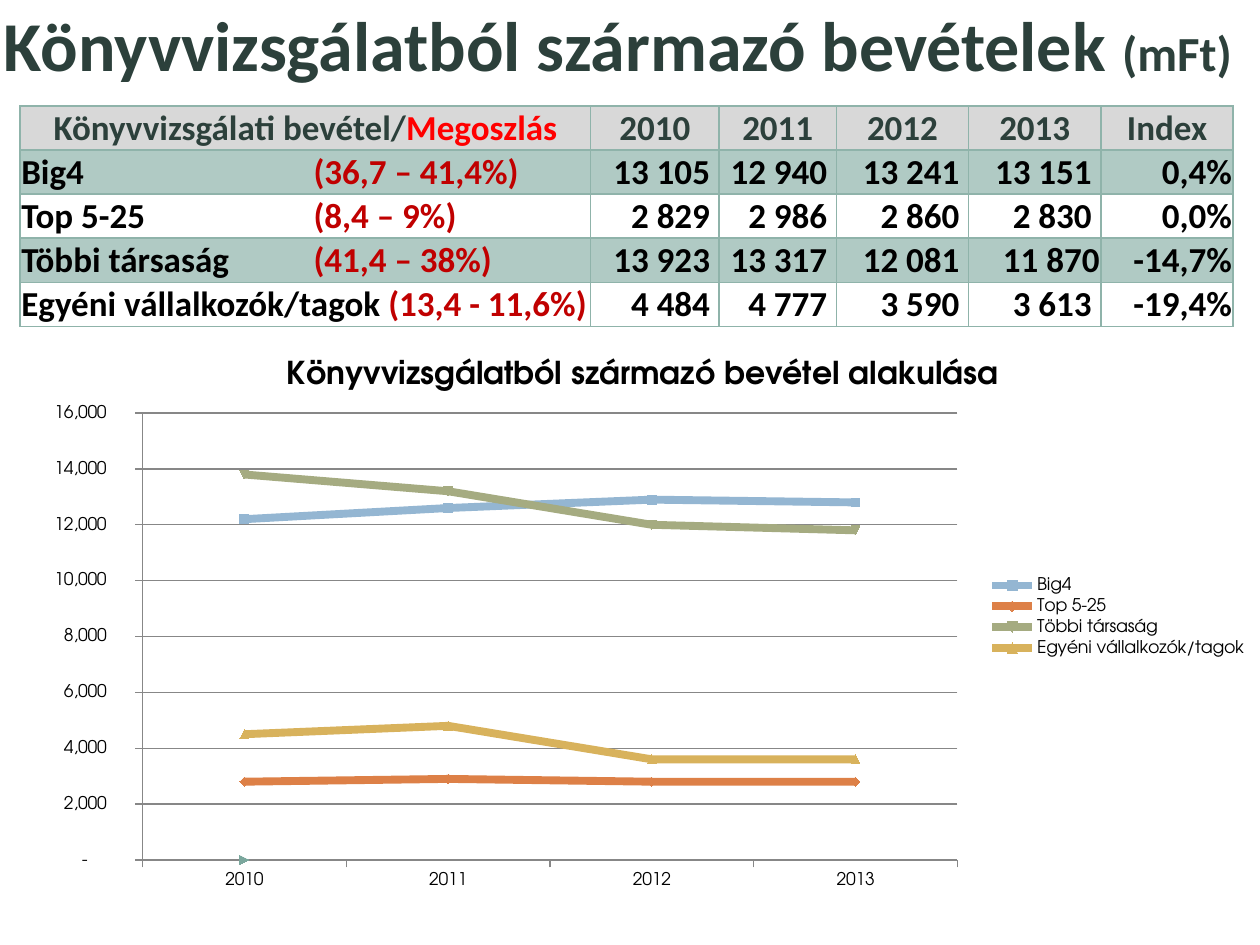
from dataclasses import dataclass

from lxml.etree import SubElement
from pptx import Presentation
from pptx.chart.data import CategoryChartData
from pptx.dml.color import RGBColor
from pptx.enum.chart import XL_CHART_TYPE, XL_LEGEND_POSITION, XL_TICK_MARK
from pptx.enum.text import MSO_ANCHOR, PP_ALIGN
from pptx.oxml import parse_xml
from pptx.oxml.ns import nsdecls, qn
from pptx.util import Pt


@dataclass(frozen=True)
class Theme:
    """Colours, fonts and type sizes of the slide."""
    dark: str = "2C403B"
    black: str = "000000"
    red: str = "FF0000"
    share: str = "C00000"
    head: str = "D8D8D8"
    band: str = "B0CAC4"
    edge: str = "8FB3AA"
    grid: str = "878787"
    lines: tuple = ("94B6D2", "DD8047", "A5AB81", "D8B25C", "7BA79D")
    text: str = "Calibri"
    plot: str = "TeX Gyre Adventor"
    title: int = 40
    unit: int = 28
    cell: int = 20
    chart: int = 18
    label: int = 10


THEME = Theme()
YEARS = ("2010", "2011", "2012", "2013")
WIDTHS = (326, 73.5, 67, 75.6, 75.6, 75.6)
ROWS = (
    ("Big4\t", "(36,7 – 41,4%)", "13 105", "12 940", "13 241", "13 151", "0,4%"),
    ("Top 5-25\t", "(8,4 – 9%)", "2 829", "2 986", "2 860", "2 830", "0,0%"),
    ("Többi társaság\t", "(41,4 – 38%)", "13 923", "13 317", "12 081", "11 870", "-14,7%"),
    ("Egyéni vállalkozók/tagok ", "(13,4 - 11,6%)", "4 484", "4 777", "3 590", "3 613", "-19,4%"),
)
SERIES = (
    ("Big4", (12200, 12600, 12900, 12800)),
    ("Top 5-25", (2800, 2900, 2800, 2800)),
    ("Többi társaság", (13800, 13200, 12000, 11800)),
    ("Egyéni vállalkozók/tagok", (4500, 4800, 3600, 3600)),
    ("Series 5", (0, None, None, None)),
)
FORMAT = r'_-* #,##0\ _F_t_-;\-* #,##0\ _F_t_-;_-* "-"??\ _F_t_-;_-@_-'


def rgb(code):
    """Turn a hex code into a colour."""
    return RGBColor.from_string(code)


def style(font, name, size, bold=True):
    """Set the face, size and weight of a font."""
    font.name, font.size, font.bold = name, Pt(size), bold


def add_runs(para, parts):
    """Add runs given as text and colour pairs."""
    for text, color in parts:
        run = para.add_run()
        run.text = text
        run.font.color.rgb = rgb(color)


def add_title(slide):
    """Place and fill the slide title."""
    shape = slide.shapes.title
    shape.left, shape.top, shape.width, shape.height = Pt(-41), Pt(-8), Pt(788), Pt(66)
    frame = shape.text_frame
    frame.vertical_anchor = MSO_ANCHOR.MIDDLE
    para = frame.paragraphs[0]
    para.alignment = PP_ALIGN.CENTER
    add_runs(para, (("Könyvvizsgálatból származó bevételek ", THEME.dark), ("(mFt)", THEME.dark)))
    for run, size in zip(para.runs, (THEME.title, THEME.unit)):
        style(run.font, THEME.text, size)


def add_edges(cell):
    """Draw the four borders of a cell."""
    props = cell._tc.get_or_add_tcPr()
    for spot, side in enumerate("LRTB"):
        props.insert(spot, parse_xml(
            f'<a:ln{side} {nsdecls("a")} w="{Pt(1)}"><a:solidFill>'
            f'<a:srgbClr val="{THEME.edge}"/></a:solidFill></a:ln{side}>'))


def fill_cell(cell, parts, align, fill=None, right=0.7):
    """Fill and format one table cell."""
    cell.margin_left = cell.margin_top = Pt(0.7)
    cell.margin_right, cell.margin_bottom = Pt(right), Pt(0)
    cell.vertical_anchor = MSO_ANCHOR.BOTTOM
    if fill:
        cell.fill.solid()
        cell.fill.fore_color.rgb = rgb(fill)
    else:
        cell.fill.background()
    add_edges(cell)
    para = cell.text_frame.paragraphs[0]
    para.alignment = align
    if "\t" in parts[0][0]:
        tabs = SubElement(para._p.get_or_add_pPr(), qn("a:tabLst"))
        SubElement(tabs, qn("a:tab"), pos=str(Pt(167)), algn="l")
    style(para.font, THEME.text, THEME.cell)
    add_runs(para, parts)


def add_grid(slide):
    """Add the table of revenues."""
    high = 25.1
    count = len(ROWS) + 1
    table = slide.shapes.add_table(
        count, len(WIDTHS), Pt(11.5), Pt(60.5), Pt(sum(WIDTHS)), Pt(high * count)).table
    table.first_row = table.horz_banding = False
    for col, width in zip(table.columns, WIDTHS):
        col.width = Pt(width)
    for row in table.rows:
        row.height = Pt(high)
    first = (("Könyvvizsgálati bevétel/", THEME.dark), ("Megoszlás", THEME.red))
    heads = [first] + [((text, THEME.dark),) for text in (*YEARS, "Index")]
    for col, parts in enumerate(heads):
        fill_cell(table.cell(0, col), parts, PP_ALIGN.CENTER, THEME.head)
    for row, (name, share, *values) in enumerate(ROWS, 1):
        fill = THEME.band if row % 2 else None
        parts = ((name, THEME.black), (share, THEME.share))
        fill_cell(table.cell(row, 0), parts, PP_ALIGN.LEFT, fill)
        for col, text in enumerate(values, 1):
            flush = col == len(values) or text == "11 870"
            fill_cell(table.cell(row, col), ((text, THEME.black),), PP_ALIGN.RIGHT,
                      fill, 0.7 if flush else 5.2)


def set_plot(chart):
    """Fix the inner plot area and hide the last legend entry."""
    area = chart._chartSpace.chart.plotArea
    for old in area.findall(qn("c:layout")):
        area.remove(old)
    spots = (("x", 0.095), ("y", 0.14), ("w", 0.66), ("h", 0.79))
    modes = '<c:layoutTarget val="inner"/><c:xMode val="edge"/><c:yMode val="edge"/>'
    sizes = "".join(f'<c:{tag} val="{val}"/>' for tag, val in spots)
    area.insert(0, parse_xml(
        f'<c:layout {nsdecls("c")}><c:manualLayout>{modes}{sizes}</c:manualLayout></c:layout>'))
    chart.legend._element.find(qn("c:legendPos")).addnext(parse_xml(
        f'<c:legendEntry {nsdecls("c")}><c:idx val="{len(SERIES) - 1}"/>'
        '<c:delete val="1"/></c:legendEntry>'))


def style_axes(chart):
    """Format both axes and the grid lines."""
    value = chart.value_axis
    value.minimum_scale, value.maximum_scale, value.major_unit = 0, 16000, 2000
    value.has_major_gridlines = True
    value.tick_labels.number_format = FORMAT
    value.tick_labels.number_format_is_linked = False
    for axis in (value, chart.category_axis):
        axis.major_tick_mark = XL_TICK_MARK.OUTSIDE
    for line in (value.format.line, chart.category_axis.format.line,
                 value.major_gridlines.format.line):
        line.color.rgb = rgb(THEME.grid)
        line.width = Pt(0.75)


def add_lines(slide):
    """Add the line chart of revenues."""
    data = CategoryChartData()
    data.categories = YEARS
    for name, values in SERIES:
        data.add_series(name, values)
    chart = slide.shapes.add_chart(
        XL_CHART_TYPE.LINE_MARKERS, Pt(14.4), Pt(190.8), Pt(705.6), Pt(323.3), data).chart
    style(chart.font, THEME.plot, THEME.label, False)
    chart.font.color.rgb = rgb(THEME.black)
    chart.has_title = True
    para = chart.chart_title.text_frame.paragraphs[0]
    style(para.font, THEME.plot, THEME.chart)
    add_runs(para, (("Könyvvizsgálatból származó bevétel alakulása", THEME.black),))
    style(para.runs[0].font, THEME.plot, THEME.chart)
    chart.has_legend = True
    chart.legend.position = XL_LEGEND_POSITION.RIGHT
    chart.legend.include_in_layout = False
    style_axes(chart)
    chart.plots[0].vary_by_categories = False
    for series, color in zip(chart.plots[0].series, THEME.lines):
        series.smooth = False
        series.format.line.color.rgb = rgb(color)
        series.format.line.width = Pt(4.5)
        series.marker.size = 5
        series.marker.format.fill.solid()
        series.marker.format.fill.fore_color.rgb = rgb(color)
    set_plot(chart)


def main():
    """Build and save the slide."""
    deck = Presentation()
    deck.slide_width, deck.slide_height = Pt(720), Pt(540)
    slide = deck.slides.add_slide(deck.slide_layouts[5])
    add_title(slide)
    add_grid(slide)
    add_lines(slide)
    deck.save("out.pptx")


if __name__ == "__main__":
    main()
